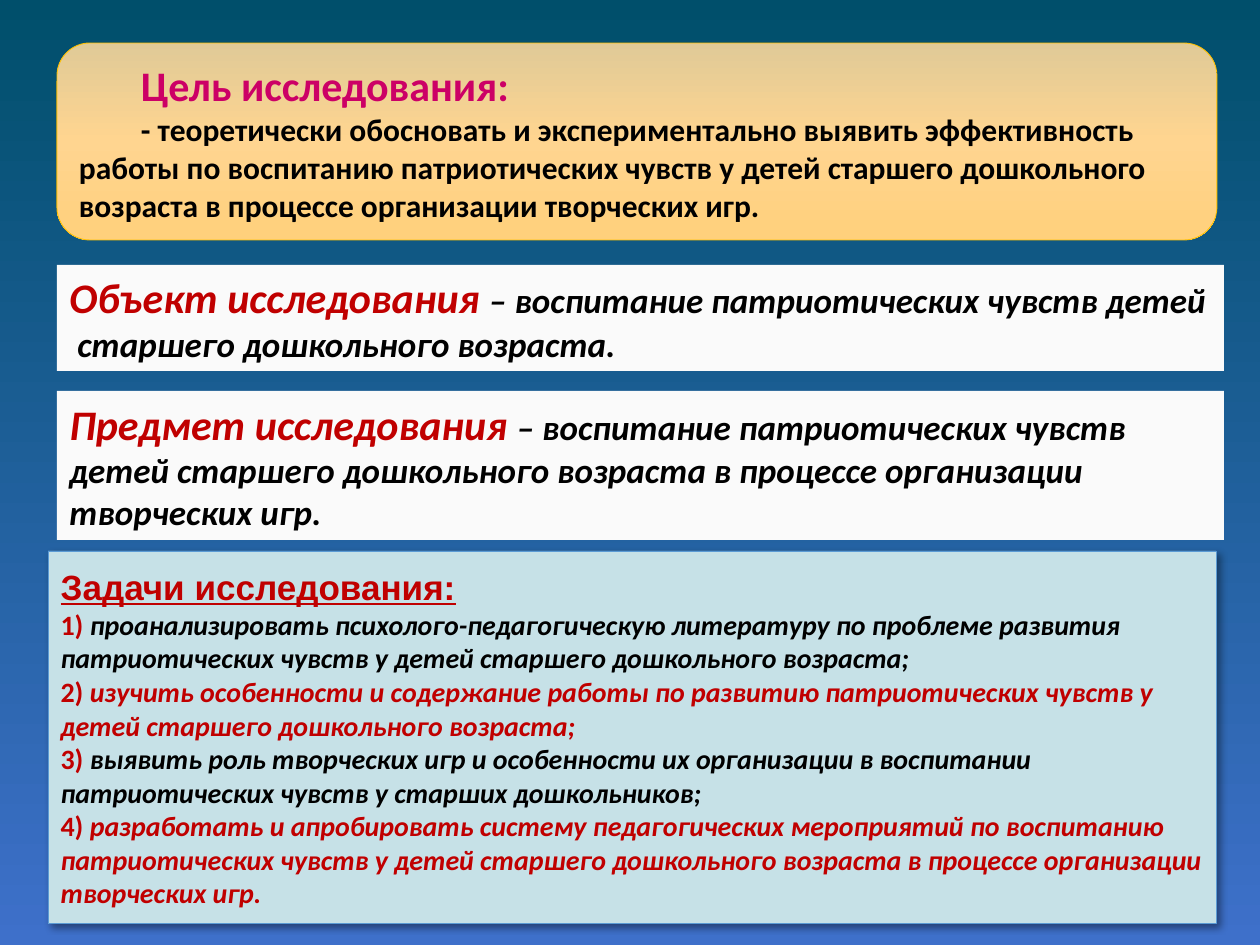
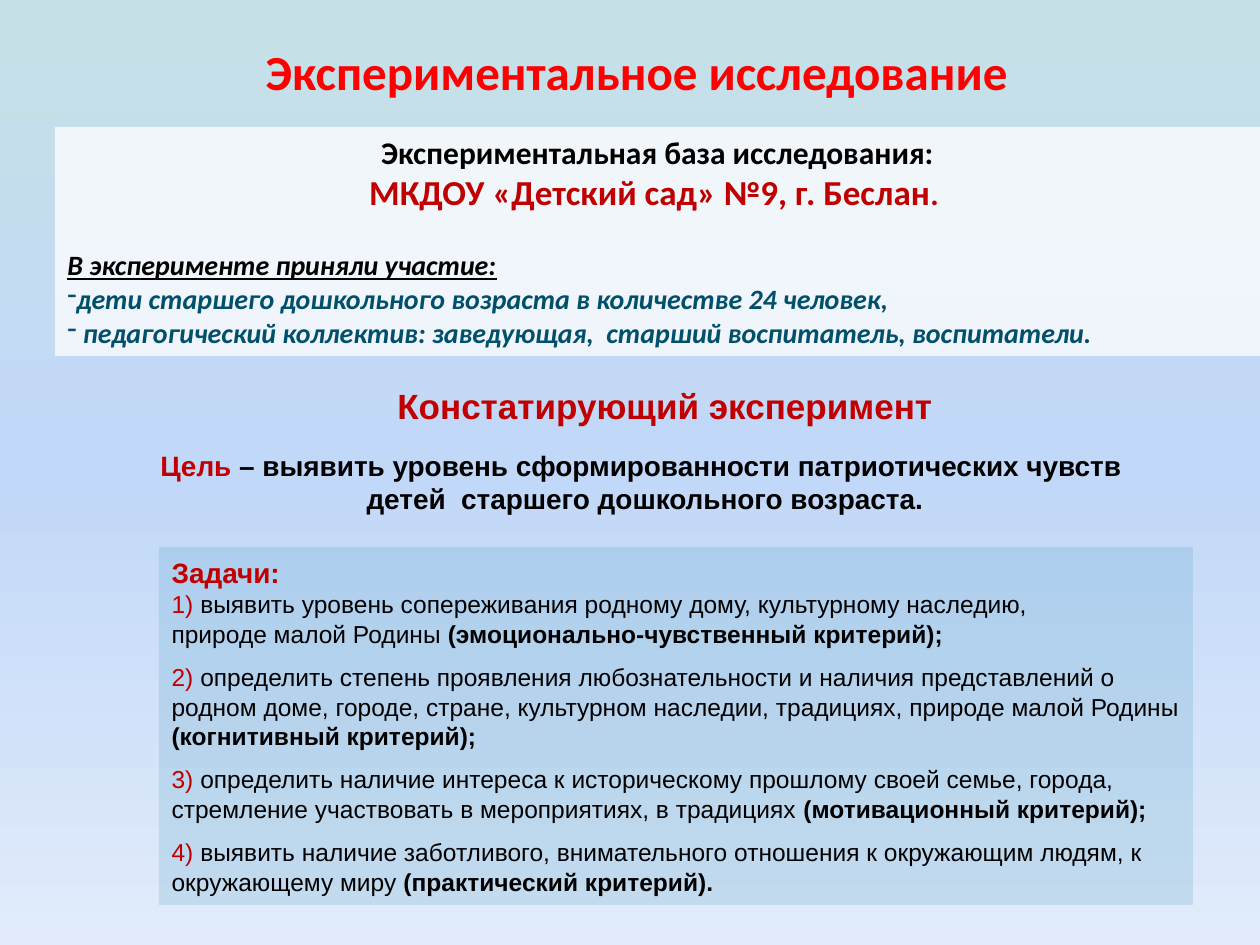
"""Build two slides on the aims, tasks and design of a preschool study."""
from lxml.etree import SubElement
from pptx import Presentation
from pptx.dml.color import RGBColor
from pptx.enum.shapes import MSO_SHAPE
from pptx.enum.text import MSO_ANCHOR, MSO_AUTO_SIZE, PP_ALIGN
from pptx.oxml.ns import qn
from pptx.util import Pt

RED, BLACK, TEAL, WHITE = "C00000", "000000", "004F6B", "FAFAFA"
rgb = RGBColor.from_string


def px(*lengths):
    """Turn pixel lengths into EMU."""
    return [round(length * 914400 / 126) for length in lengths]


def write(shape, paragraphs, font="Calibri", anchor=MSO_ANCHOR.MIDDLE, wrap=True):
    """Fill a shape with (look, runs) paragraphs, each run being (text, look)."""
    frame = shape.text_frame
    frame.auto_size = MSO_AUTO_SIZE.NONE
    frame.word_wrap = wrap
    frame.vertical_anchor = anchor
    for index, (look, runs) in enumerate(paragraphs):
        paragraph = frame.paragraphs[0] if index == 0 else frame.add_paragraph()
        look = {"name": font, **look}
        properties = paragraph._p.get_or_add_pPr()
        properties.set("marL", "0")
        properties.set("indent", str(px(look.pop("indent", 0))[0]))
        bullet = look.pop("bullet", None)
        if bullet:
            SubElement(properties, qn("a:buChar"), char=bullet)
        else:
            SubElement(properties, qn("a:buNone"))
        paragraph.alignment = look.pop("align", PP_ALIGN.LEFT)
        paragraph.space_before = Pt(look.pop("before", 0))
        styled = [(paragraph.font, look)]
        for text, run_look in runs:
            run = paragraph.add_run()
            run.text = text
            styled.append((run.font, run_look))
        for target, settings in styled:
            for key, value in settings.items():
                if key == "color":
                    target.color.rgb = rgb(value)
                elif key == "size":
                    target.size = Pt(value)
                else:
                    setattr(target, key, value)


deck = Presentation()
deck.slide_width, deck.slide_height = px(1260, 945)
aims = deck.slides.add_slide(deck.slide_layouts[1])
experiment = deck.slides.add_slide(deck.slide_layouts[1])
aims.shapes.title._element.getparent().remove(aims.shapes.title._element)

goal = aims.shapes.add_shape(MSO_SHAPE.ROUNDED_RECTANGLE, *px(57, 43, 1160, 197))
goal.shadow.inherit = False
goal.line.color.rgb = rgb("FFC000")
goal.line.width = Pt(0.5)
write(goal, [
    ({"size": 24, "bold": True, "color": "CC0066", "indent": 62}, [("Цель исследования:", {})]),
    ({"size": 18, "bold": True, "color": BLACK, "indent": 62}, [(
        "- теоретически обосновать и экспериментально выявить эффективность работы по воспитанию "
        "патриотических чувств у детей старшего дошкольного возраста в процессе организации "
        "творческих игр.", {})]),
])

definitions = [
    (265, 106, "Объект исследования ",
     "– воспитание патриотических чувств детей  старшего дошкольного возраста."),
    (391, 149, "Предмет исследования ",
     "– воспитание патриотических чувств детей старшего дошкольного возраста в процессе "
     "организации творческих игр."),
]
for top, height, term, meaning in definitions:
    definition = aims.shapes.add_shape(MSO_SHAPE.RECTANGLE, *px(57, top, 1167, height))
    definition.shadow.inherit = False
    definition.fill.solid()
    definition.fill.fore_color.rgb = rgb(WHITE)
    definition.line.fill.background()
    write(definition, [({"bold": True, "italic": True}, [
        (term, {"size": 24, "color": RED}), (meaning, {"size": 20, "color": BLACK})])])

study_tasks = aims.placeholders[1]
study_tasks.left, study_tasks.top, study_tasks.width, study_tasks.height = px(48, 551, 1168, 373)
study_tasks.fill.solid()
study_tasks.fill.fore_color.rgb = rgb("C6E1E7")
study_tasks.line.color.rgb = rgb("5B9BD5")
study_tasks.line.width = Pt(0.5)
study_tasks.shadow.inherit = False
shadow = SubElement(study_tasks._element.spPr.find(qn("a:effectLst")), qn("a:outerShdw"),
                    blurRad=str(Pt(4)), dist=str(Pt(3)), dir="2700000", algn="tl", rotWithShape="0")
SubElement(SubElement(shadow, qn("a:srgbClr"), val=BLACK), qn("a:alpha"), val="40000")
study_steps = [
    "проанализировать психолого-педагогическую литературу по проблеме развития патриотических "
    "чувств у детей старшего дошкольного возраста;",
    "изучить особенности и содержание работы по развитию патриотических чувств у детей старшего "
    "дошкольного возраста;",
    "выявить роль творческих игр и особенности их организации в воспитании патриотических чувств "
    "у старших дошкольников;",
    "разработать и апробировать систему педагогических мероприятий по воспитанию патриотических "
    "чувств у детей старшего дошкольного возраста в процессе организации творческих игр.",
]
write(study_tasks, [
    ({"size": 20, "name": "Arial", "bold": True, "underline": True, "color": RED},
     [("Задачи исследования:", {})]),
    *[({"size": 16, "bold": True},
       [(f"{number}) ", {"color": RED}),
        (step, {"italic": True, "color": BLACK if number % 2 else RED})])
      for number, step in enumerate(study_steps, 1)],
])

heading = experiment.shapes.title
heading.left, heading.top, heading.width, heading.height = px(110, 35, 1053, 72)
write(heading, [({"size": 28, "bold": True, "color": "FF0000", "align": PP_ALIGN.CENTER},
                 [("Экспериментальное исследование", {})])])

base = experiment.shapes.add_shape(MSO_SHAPE.RECTANGLE, *px(55, 127, 1205, 229))
base.shadow.inherit = False
base.line.fill.background()
participant = {"size": 16, "bold": True, "italic": True, "color": TEAL, "bullet": "-"}
write(base, [
    ({"size": 18, "bold": True, "color": BLACK, "align": PP_ALIGN.CENTER},
     [("Экспериментальная база исследования:", {})]),
    ({"bold": True, "color": RED, "align": PP_ALIGN.CENTER},
     [("МКДОУ «Детский сад» №9, г. Беслан", {"size": 20}), (". ", {"size": 18})]),
    ({"size": 16, "bold": True, "italic": True, "underline": True, "color": BLACK, "before": 20},
     [("В эксперименте приняли участие:", {})]),
    (participant, [("дети старшего дошкольного возраста в количестве 24 человек,", {})]),
    (participant, [(" педагогический коллектив: заведующая,  старший воспитатель, воспитатели.", {})]),
], anchor=MSO_ANCHOR.TOP)

stage = experiment.shapes.add_textbox(*px(323, 378, 627, 55))
write(stage, [({"size": 20, "bold": True, "color": RED, "indent": 62},
               [("Констатирующий эксперимент", {})])], font="Arial", wrap=False)

stage_goal = experiment.shapes.add_textbox(*px(48, 442, 1194, 81))
centred = {"size": 16, "bold": True, "align": PP_ALIGN.CENTER}
write(stage_goal, [
    (centred, [("Цель", {"color": RED}),
               (" – выявить уровень сформированности патриотических чувств ", {"color": BLACK})]),
    ({**centred, "color": BLACK}, [("детей  старшего дошкольного возраста.", {})]),
], font="Arial", anchor=MSO_ANCHOR.TOP)

stage_tasks = experiment.placeholders[1]
stage_tasks.left, stage_tasks.top, stage_tasks.width, stage_tasks.height = px(159, 547, 1034, 358)
stage_steps = [
    ("определить степень проявления любознательности и наличия представлений о родном доме, "
     "городе, стране, культурном наследии, традициях, природе малой Родины ",
     "(когнитивный критерий);"),
    ("определить наличие интереса к историческому прошлому своей семье, города, стремление "
     "участвовать в мероприятиях, в традициях ", "(мотивационный критерий);"),
    ("выявить наличие заботливого, внимательного отношения к окружающим людям, к окружающему "
     "миру ", "(практический критерий)."),
]
write(stage_tasks, [
    ({"size": 16, "bold": True, "color": RED}, [("Задачи:", {})]),
    ({"size": 14}, [("1) ", {"color": RED}),
                    ("выявить уровень сопереживания родному дому, культурному наследию,",
                     {"color": BLACK})]),
    ({"size": 14, "color": BLACK}, [("природе малой Родины ", {}),
                                    ("(эмоционально-чувственный критерий);", {"bold": True})]),
    *[({"size": 14, "before": 8},
       [(f"{number}) ", {"color": RED}), (step, {"color": BLACK}),
        (criterion, {"color": BLACK, "bold": True})])
      for number, (step, criterion) in enumerate(stage_steps, 2)],
], font="Arial")

for panel, tint, opacity in [(base, "FFFFFF", 75), (stage_tasks, "1E88A9", 15)]:
    panel.fill.solid()
    panel.fill.fore_color.rgb = rgb(tint)
    tint_node = panel._element.spPr.find(qn("a:solidFill")).find(qn("a:srgbClr"))
    SubElement(tint_node, qn("a:alpha"), val=str(opacity * 1000))

gradients = [
    (aims.background.fill, aims._element, [TEAL, "3E70CA"]),
    (goal.fill, goal._element, ["E0CA97", "FFD590", "FFD07C"]),
    (experiment.background.fill, experiment._element, ["C6E1E7", "C2D8F8", "E1EBFB"]),
]
for fill, owner, colours in gradients:
    fill.gradient()
    fill.gradient_angle = 270
    stops = next(owner.iter(qn("a:gsLst")))
    for stop in list(stops):
        stops.remove(stop)
    for index, colour in enumerate(colours):
        position = index * 100000 // (len(colours) - 1)
        SubElement(SubElement(stops, qn("a:gs"), pos=str(position)), qn("a:srgbClr"), val=colour)

deck.save("out.pptx")
